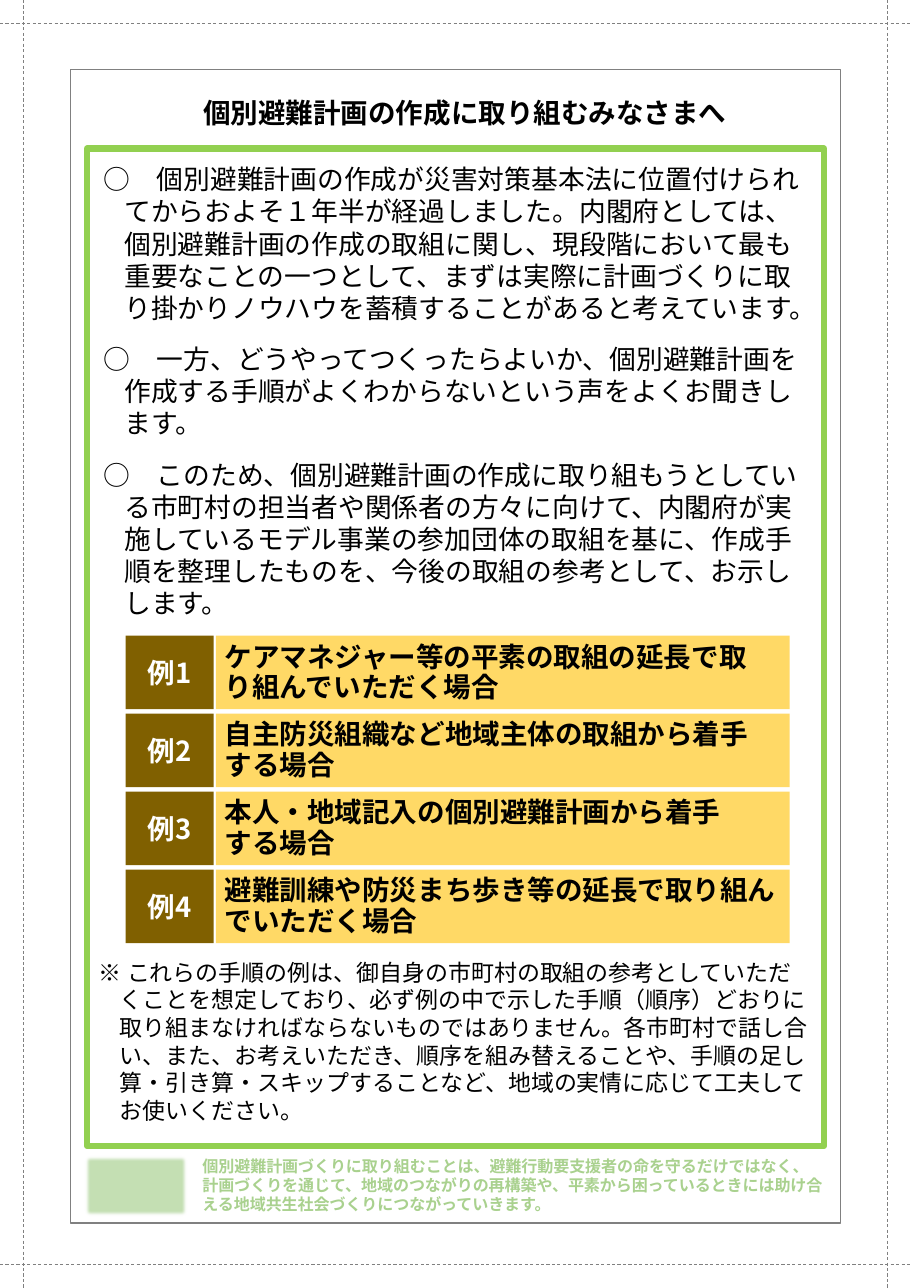
import pptx
import pptx.dml.color
import pptx.enum.dml
import pptx.enum.shapes
import pptx.enum.text
import pptx.oxml
import pptx.oxml.ns
import pptx.util

Inches = pptx.util.Inches
Pt = pptx.util.Pt
ALIGN = pptx.enum.text.PP_ALIGN
ANCHOR = pptx.enum.text.MSO_ANCHOR

FONT = "Noto Sans CJK JP"
WIDTH, HEIGHT = 8.27, 11.69
BLACK, WHITE, GRAY = "000000", "FFFFFF", "808080"
BROWN, YELLOW = "806000", "FFD966"
GREEN, PALE_GREEN, TEXT_GREEN = "92D050", "C5E0B4", "A9D18E"

TITLE = "個別避難計画の作成に取り組むみなさまへ"
# Top, height and wording of each introductory paragraph
INTRODUCTION = [
    (1.43, 1.57, "○　個別避難計画の作成が災害対策基本法に位置付けられてからおよそ１年半が経過しました。"
     "内閣府としては、個別避難計画の作成の取組に関し、現段階において最も重要なことの一つとして、"
     "まずは実際に計画づくりに取り掛かりノウハウを蓄積することがあると考えています。"),
    (3.06, 1.01, "○　一方、どうやってつくったらよいか、個別避難計画を作成する手順が"
     "よくわからないという声をよくお聞きします。"),
    (4.11, 1.62, "○　このため、個別避難計画の作成に取り組もうとしている市町村の担当者や関係者の方々に向けて、"
     "内閣府が実施しているモデル事業の参加団体の取組を基に、作成手順を整理したものを、"
     "今後の取組の参考として、お示しします。"),
]
# Text width and wording of each example
EXAMPLES = [
    (4.76, "ケアマネジャー等の平素の取組の延長で取り組んでいただく場合"),
    (4.94, "自主防災組織など地域主体の取組から着手する場合"),
    (4.74, "本人・地域記入の個別避難計画から着手する場合"),
    (5.13, "避難訓練や防災まち歩き等の延長で取り組んでいただく場合"),
]
NOTE = ("※ これらの手順の例は、御自身の市町村の取組の参考としていただくことを想定しており、"
        "必ず例の中で示した手順（順序）どおりに取り組まなければならないものではありません。"
        "各市町村で話し合い、また、お考えいただき、順序を組み替えることや、"
        "手順の足し算・引き算・スキップすることなど、地域の実情に応じて工夫してお使いください。")
CLOSING = ("個別避難計画づくりに取り組むことは、避難行動要支援者の命を守るだけではなく、"
           "計画づくりを通じて、地域のつながりの再構築や、平素から困っているときには"
           "助け合える地域共生社会づくりにつながっていきます。")


def color(value):
    return pptx.dml.color.RGBColor.from_string(value)


def write(box, text, size, ink=BLACK, bold=False, align=ALIGN.LEFT,
          anchor=ANCHOR.TOP, leading=None, hanging=0):
    """Put one paragraph in the box; leading is in points, hanging in inches."""
    frame = box.text_frame
    frame.word_wrap = True
    frame.auto_size = pptx.enum.text.MSO_AUTO_SIZE.NONE
    frame.vertical_anchor = anchor
    para = frame.paragraphs[0]
    para.alignment = align
    para.line_spacing = Pt(leading or size * 1.2)
    if hanging:
        properties = para._p.get_or_add_pPr()
        properties.set("marL", str(Inches(hanging)))
        properties.set("indent", str(-Inches(hanging)))
    span = para.add_run()
    span.text = text
    span.font.size = Pt(size)
    span.font.bold = bold
    span.font.color.rgb = color(ink)
    span.font.name = FONT
    run_properties = span._r.get_or_add_rPr()
    run_properties.set("lang", "ja-JP")
    east_asian = pptx.oxml.parse_xml(
        f'<a:ea {pptx.oxml.ns.nsdecls("a")} typeface="{FONT}"/>')
    run_properties.find(pptx.oxml.ns.qn("a:latin")).addnext(east_asian)


def add_rectangle(slide, left, top, width, height, fill=None, line=None, weight=1):
    shape = slide.shapes.add_shape(
        pptx.enum.shapes.MSO_SHAPE.RECTANGLE,
        Inches(left), Inches(top), Inches(width), Inches(height))
    shape.shadow.inherit = False
    if fill:
        shape.fill.solid()
        shape.fill.fore_color.rgb = color(fill)
    else:
        shape.fill.background()
    if line:
        shape.line.color.rgb = color(line)
        shape.line.width = Pt(weight)
    else:
        shape.line.fill.background()
    return shape


def add_text(slide, left, top, width, height, text, size, **style):
    box = slide.shapes.add_textbox(
        Inches(left), Inches(top), Inches(width), Inches(height))
    write(box, text, size, **style)


def set_title(slide, left, top, width, height):
    title = slide.shapes.title
    title.left, title.top = Inches(left), Inches(top)
    title.width, title.height = Inches(width), Inches(height)
    write(title, TITLE, 18, bold=True, align=ALIGN.CENTER, anchor=ANCHOR.MIDDLE)


def add_introduction(slide, left, width):
    for top, height, text in INTRODUCTION:
        add_text(slide, left, top, width, height, text, 17.5, hanging=0.19)


def add_examples(slide, left, top, width, height):
    badge_width, gap, inset = 0.8, 0.04, 0.08
    row_height = (height - gap * (len(EXAMPLES) - 1)) / len(EXAMPLES)
    panel_width = width - badge_width - 0.02
    for index, (text_width, text) in enumerate(EXAMPLES):
        row_top = top + index * (row_height + gap)
        badge = add_rectangle(slide, left, row_top, badge_width, row_height, BROWN)
        write(badge, f"例{index + 1}", 18, WHITE, True, ALIGN.CENTER, ANCHOR.MIDDLE)

        panel = add_rectangle(slide, left + width - panel_width, row_top,
                              panel_width, row_height, YELLOW)
        write(panel, text, 18, bold=True, anchor=ANCHOR.MIDDLE, leading=20)
        frame = panel.text_frame
        frame.margin_left = Inches(inset)
        frame.margin_right = Inches(panel_width - inset - text_width)
        frame.margin_top = frame.margin_bottom = 0


def add_closing(slide, left, top, width, height):
    patch = add_rectangle(slide, left, top + 0.03, 0.95, 0.57, PALE_GREEN)
    effects = patch._element.spPr.find(pptx.oxml.ns.qn("a:effectLst"))
    effects.append(pptx.oxml.parse_xml(
        f'<a:softEdge {pptx.oxml.ns.nsdecls("a")} rad="{Pt(2.5)}"/>'))
    add_text(slide, left + 0.98, top, width - 0.98, height, CLOSING, 10.5,
             ink=TEXT_GREEN, bold=True, leading=12.5)


def add_crop_marks(slide, margin_x, margin_y):
    verticals = [(x, 0, x, HEIGHT) for x in (margin_x, WIDTH - margin_x)]
    horizontals = [(0, y, WIDTH, y) for y in (margin_y, HEIGHT - margin_y)]
    for ends in verticals + horizontals:
        mark = slide.shapes.add_connector(
            pptx.enum.shapes.MSO_CONNECTOR.STRAIGHT, *map(Inches, ends))
        mark.line.color.rgb = color(GRAY)
        mark.line.width = Pt(0.5)
        mark.line.dash_style = pptx.enum.dml.MSO_LINE.DASH
        mark._element.spPr.append(pptx.oxml.parse_xml(
            f'<a:effectLst {pptx.oxml.ns.nsdecls("a")}/>'))


def main():
    deck = pptx.Presentation()
    deck.slide_width, deck.slide_height = Inches(WIDTH), Inches(HEIGHT)
    slide = deck.slides.add_slide(deck.slide_layouts.get_by_name("Title Only"))
    add_rectangle(slide, 0.64, 0.63, 6.99, 10.47, line=GRAY)
    set_title(slide, 1.72, 0.82, 5, 0.4)
    add_rectangle(slide, 0.79, 1.35, 6.69, 9.05, line=GREEN, weight=4.25)
    add_introduction(slide, 0.84, 6.64)
    add_examples(slide, 1.14, 5.77, 6.03, 2.79)
    add_text(slide, 0.8, 8.65, 6.69, 1.62, NOTE, 15, hanging=0.19)
    add_closing(slide, 0.76, 10.45, 6.82, 0.63)
    add_crop_marks(slide, 0.21, 0.21)
    deck.save("out.pptx")


if __name__ == "__main__":
    main()
